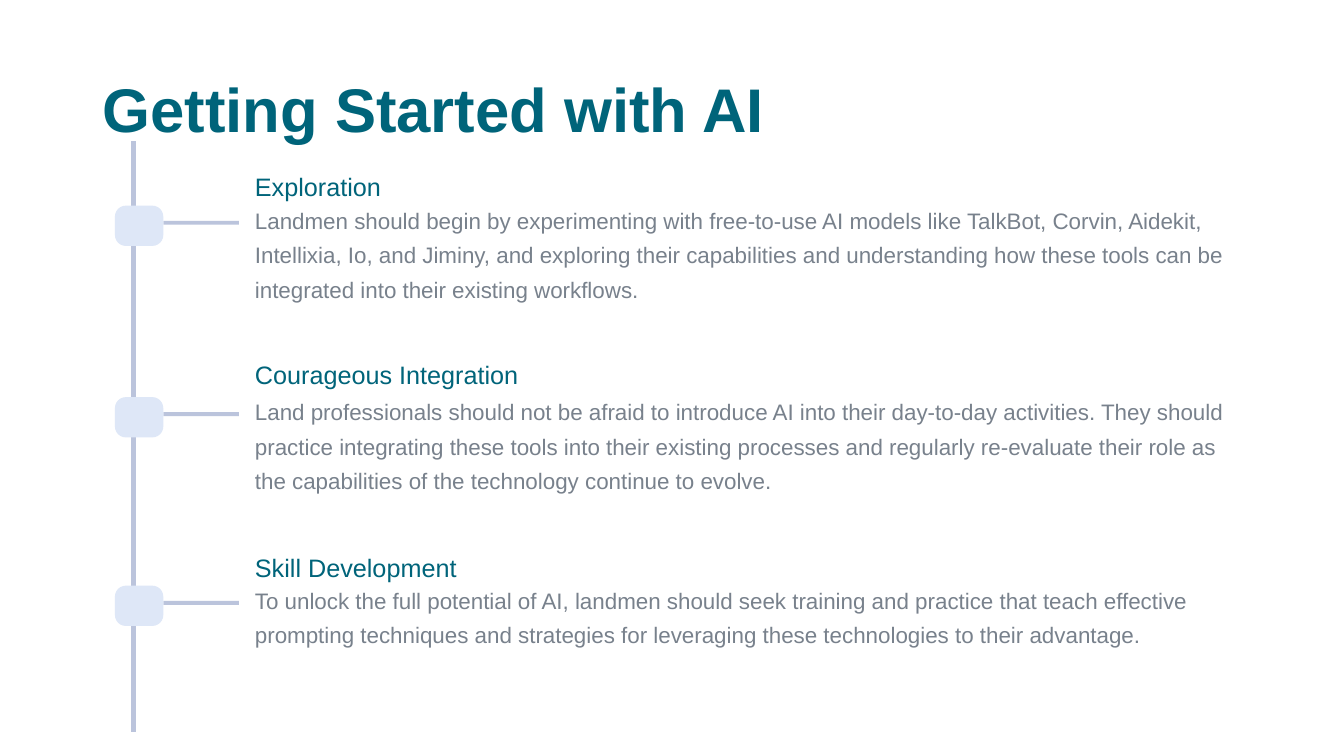
"""Build the "Getting Started with AI" timeline slide."""
from pptx import Presentation
from pptx.dml.color import RGBColor
from pptx.enum.shapes import MSO_SHAPE as Form
from pptx.enum.text import MSO_ANCHOR as Anchor
from pptx.util import Inches, Pt

TEAL = RGBColor(0x00, 0x64, 0x7A)
GRAY = RGBColor(0x78, 0x81, 0x8C)
LINE = RGBColor(0xBB, 0xC4, 0xDC)
NODE = RGBColor(0xDE, 0xE7, 0xF7)

deck = Presentation()
deck.slide_width, deck.slide_height = Inches(13.33), Inches(7.5)
COL, ROW = deck.slide_width / 100, deck.slide_height / 100
slide = deck.slides.add_slide(deck.slide_layouts[6])


def block(form, x, y, w, h, color):
    shape = slide.shapes.add_shape(
        form, int(x * COL), int(y * ROW), int(w * COL), int(h * ROW))
    shape.shadow.inherit = False
    shape.fill.solid()
    shape.fill.fore_color.rgb = color
    shape.line.fill.background()
    return shape


def label(text, x, y, w, h, size, color, space):
    frame = slide.shapes.add_textbox(
        int(x * COL), int(y * ROW), int(w * COL), int(h * ROW)).text_frame
    frame.word_wrap = True
    para = frame.paragraphs[0]
    para.text = text
    para.line_spacing = space
    font = para.font
    font.name, font.size, font.color.rgb = "Arial", Pt(size), color
    return frame


title = label("Getting Started with AI", 6.9, 9.2, 86.25, 11.33, 44, TEAL, 0.9)
title.vertical_anchor = Anchor.MIDDLE
title.paragraphs[0].font.bold = True

block(Form.RECTANGLE, 9.75, 18.67, 0.37, 78.13, LINE)

STEPS = [
    (27.2, 21.6, "Exploration",
     "Landmen should begin by experimenting with free-to-use AI models like "
     "TalkBot, Corvin, Aidekit, Intellixia, Io, and Jiminy, and exploring their "
     "capabilities and understanding how these tools can be integrated into "
     "their existing workflows."),
    (52.53, 46.4, "Courageous Integration",
     "Land professionals should not be afraid to introduce AI into their "
     "day-to-day activities. They should practice integrating these tools into "
     "their existing processes and regularly re-evaluate their role as the "
     "capabilities of the technology continue to evolve."),
    (77.47, 72, "Skill Development",
     "To unlock the full potential of AI, landmen should seek training and "
     "practice that teach effective prompting techniques and strategies for "
     "leveraging these technologies to their advantage."),
]
LEFT, NODE_W, TEXT_X = 8.55, 3.6, 18.23

for top, head_y, head, body in STEPS:
    block(Form.RECTANGLE, LEFT + NODE_W, top + 2, 5.63, 0.53, LINE)
    node = block(Form.ROUNDED_RECTANGLE, LEFT, top, NODE_W, 5.33, NODE)
    node.adjustments[0] = 0.27
    label(head, TEXT_X, head_y, 26, 4.4, 18, TEAL, Pt(24))
    label(body, TEXT_X, top - 1.5, 74.94, 13.6, 16, GRAY, Pt(24.6))

deck.save("out.pptx")
